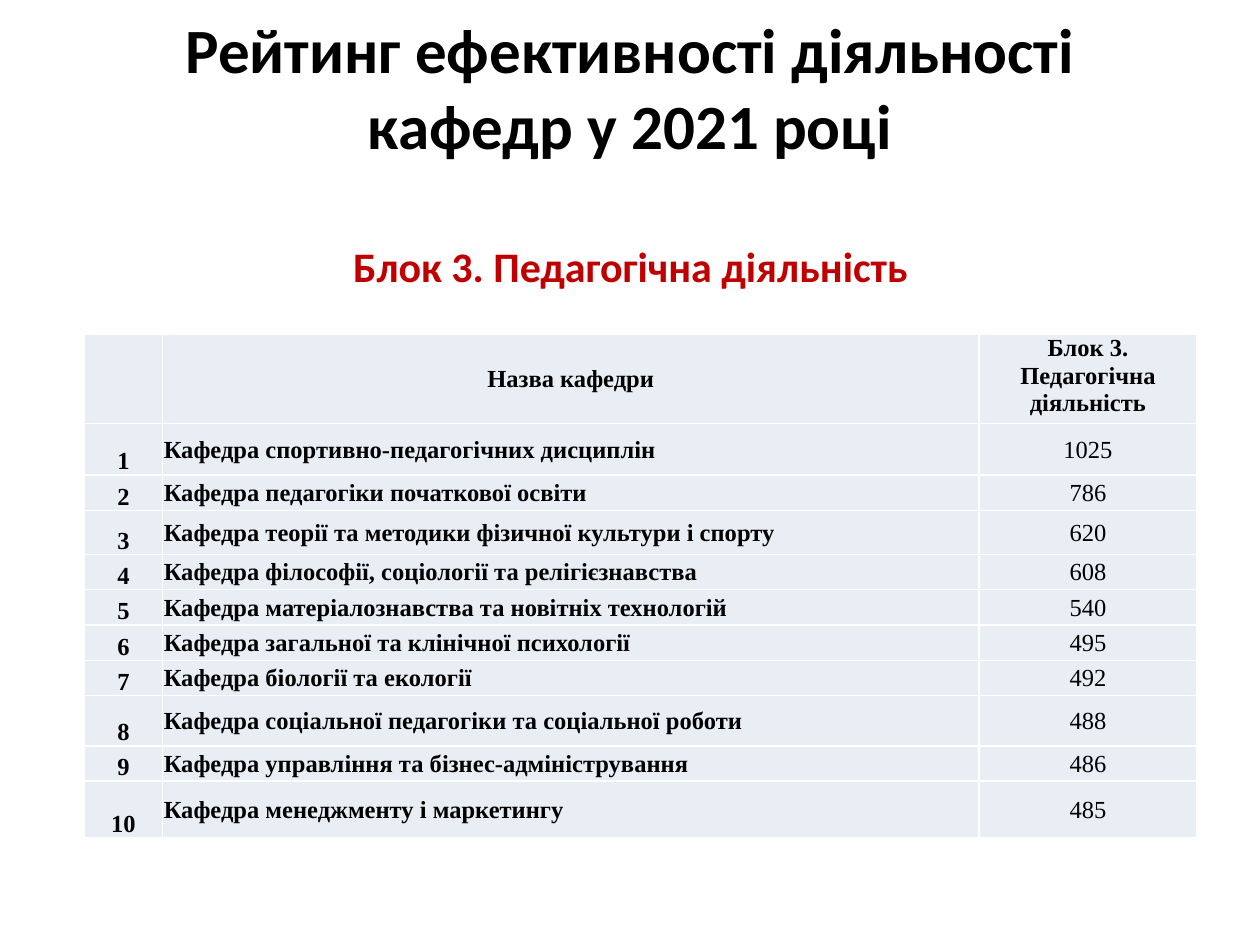
from lxml import etree
from pptx import Presentation
from pptx.dml.color import RGBColor
from pptx.enum.text import MSO_ANCHOR, MSO_AUTO_SIZE, PP_ALIGN
from pptx.oxml.ns import qn
from pptx.util import Inches, Pt

LEFT, CENTER = PP_ALIGN.LEFT, PP_ALIGN.CENTER
TOP, MIDDLE, BOTTOM = MSO_ANCHOR.TOP, MSO_ANCHOR.MIDDLE, MSO_ANCHOR.BOTTOM
TITLE_ONLY = 5
BLACK, RED, WHITE, PALE_BLUE = "000000", "C00000", "FFFFFF", "E9EDF4"

COLUMN_WIDTHS = [0.62, 6.48, 1.73]
HEADER_HEIGHT, LINE_HEIGHT = 0.71, 0.28
TALL_ROWS = {1: 0.41, 3: 0.35, 8: 0.4, 10: 0.45}
BLOCK_NAME = "Блок 3. Педагогічна діяльність"
DEPARTMENTS = [
    ("Кафедра спортивно-педагогічних дисциплін", 1025),
    ("Кафедра педагогіки початкової освіти", 786),
    ("Кафедра теорії та методики фізичної культури і спорту", 620),
    ("Кафедра філософії, соціології та релігієзнавства", 608),
    ("Кафедра матеріалознавства та новітніх технологій", 540),
    ("Кафедра загальної та клінічної психології", 495),
    ("Кафедра біології та екології", 492),
    ("Кафедра соціальної педагогіки та соціальної роботи", 488),
    ("Кафедра управління та бізнес-адміністрування", 486),
    ("Кафедра менеджменту і маркетингу", 485),
]


def color(value):
    return RGBColor.from_string(value)


def write(text_frame, text, size, font="Calibri", fill=BLACK, bold=True, align=CENTER):
    paragraph = text_frame.paragraphs[0]
    paragraph.alignment = align
    run = paragraph.add_run()
    run.text = text
    run.font.name = font
    run.font.size = Pt(size)
    run.font.bold = bold
    run.font.color.rgb = color(fill)


def add_title(slide, box):
    title = slide.shapes.title
    title.left, title.top, title.width, title.height = map(Inches, box)
    title.text_frame.vertical_anchor = MIDDLE
    title.text_frame.auto_size = MSO_AUTO_SIZE.NONE
    write(title.text_frame, "Рейтинг ефективності діяльності кафедр у 2021 році", 36)


def add_subtitle(slide, box):
    text_frame = slide.shapes.add_textbox(*map(Inches, box)).text_frame
    text_frame.word_wrap = False
    text_frame.auto_size = MSO_AUTO_SIZE.SHAPE_TO_FIT_TEXT
    write(text_frame, BLOCK_NAME, 24, fill=RED)


def add_borders(cell):
    properties = cell._tc.get_or_add_tcPr()
    for index, side in enumerate(("a:lnL", "a:lnR", "a:lnT", "a:lnB")):
        line = etree.Element(qn(side), w=str(Pt(1)))
        fill = etree.SubElement(line, qn("a:solidFill"))
        etree.SubElement(fill, qn("a:srgbClr"), val=WHITE)
        properties.insert(index, line)


def format_cell(cell, text, anchor, align, bold):
    cell.fill.solid()
    cell.fill.fore_color.rgb = color(PALE_BLUE)
    add_borders(cell)
    if text:
        cell.margin_left = cell.margin_right = cell.margin_top = Inches(0.01)
        cell.margin_bottom = 0
        cell.vertical_anchor = anchor
        write(cell.text_frame, text, 14, "Times New Roman", bold=bold, align=align)


def add_rating_table(slide, box):
    row_count = len(DEPARTMENTS) + 1
    table = slide.shapes.add_table(row_count, len(COLUMN_WIDTHS), *map(Inches, box)).table
    table.first_row = table.horz_banding = False
    for column, width in zip(table.columns, COLUMN_WIDTHS):
        column.width = Inches(width)
    for index, row in enumerate(table.rows):
        height = TALL_ROWS.get(index, LINE_HEIGHT) if index else HEADER_HEIGHT
        row.height = Inches(height)

    # Header row
    headers = [("", MIDDLE), ("Назва кафедри", MIDDLE), (BLOCK_NAME, TOP)]
    for column, (text, anchor) in enumerate(headers):
        format_cell(table.cell(0, column), text, anchor, CENTER, True)

    # Ranked departments
    for rank, (name, score) in enumerate(DEPARTMENTS, start=1):
        format_cell(table.cell(rank, 0), str(rank), BOTTOM, CENTER, True)
        format_cell(table.cell(rank, 1), name, MIDDLE, LEFT, True)
        format_cell(table.cell(rank, 2), str(score), MIDDLE, CENTER, False)


def main():
    presentation = Presentation()
    presentation.slide_width, presentation.slide_height = Inches(10), Inches(7.5)
    slide = presentation.slides.add_slide(presentation.slide_layouts[TITLE_ONLY])
    add_title(slide, (0.5, 0.3, 9, 0.77))
    add_subtitle(slide, (2.68, 1.86, 4.65, 0.5))
    add_rating_table(slide, (0.67, 2.65, sum(COLUMN_WIDTHS), 4))
    presentation.save("out.pptx")


if __name__ == "__main__":
    main()
